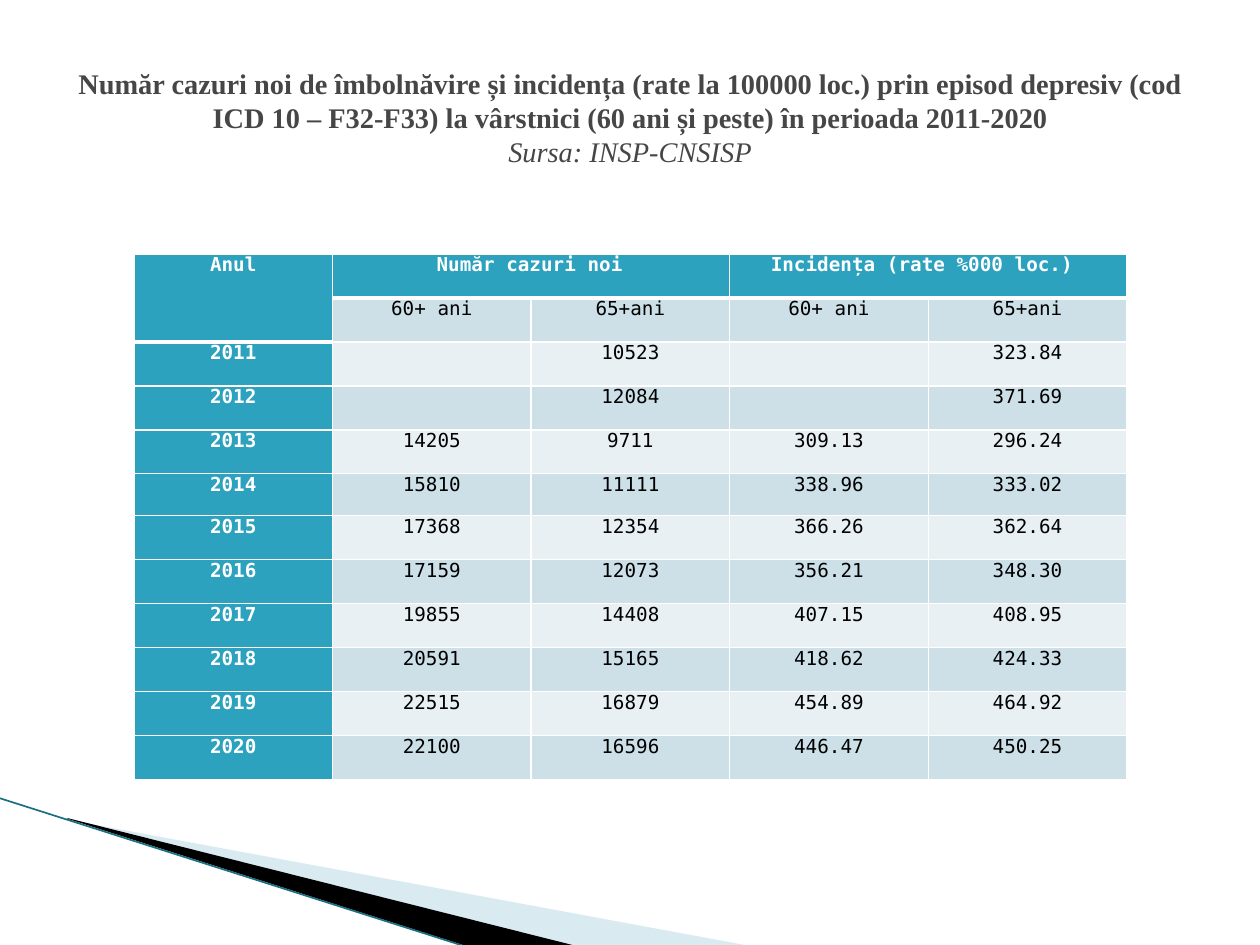
from typing import NamedTuple

from lxml import etree
from pptx import Presentation
from pptx.dml.color import RGBColor
from pptx.enum.shapes import MSO_CONNECTOR
from pptx.enum.text import MSO_ANCHOR, MSO_AUTO_SIZE, PP_ALIGN
from pptx.oxml.ns import qn
from pptx.util import Pt

STRAIGHT = MSO_CONNECTOR.STRAIGHT
CENTER = PP_ALIGN.CENTER
MIDDLE = MSO_ANCHOR.MIDDLE
NO_AUTOFIT = MSO_AUTO_SIZE.NONE

SCALE = 914400 / 126
TITLE_ONLY = 5

WHITE = RGBColor(0xFF, 0xFF, 0xFF)
BLACK = RGBColor(0x00, 0x00, 0x00)
GRAY = RGBColor(0x46, 0x46, 0x46)
TEAL = RGBColor(0x2D, 0xA2, 0xBF)
DARK_TEAL = RGBColor(0x1B, 0x6F, 0x82)
PALE_BLUE = RGBColor(0xA0, 0xCB, 0xDC)
BAND_DARK = RGBColor(0xCD, 0xE0, 0xE8)
BAND_LIGHT = RGBColor(0xE8, 0xF0, 0xF4)

SERIF = "Times New Roman"
MONO = "DejaVu Sans Mono"


class Wedge(NamedTuple):
    points: list[tuple[int, int]]
    color: RGBColor
    opacity: int


class YearRow(NamedTuple):
    year: str
    cases_60: str
    cases_65: str
    rate_60: str
    rate_65: str


WEDGES = [
    Wedge([(69, 820), (750, 946), (575, 946), (69, 819)], PALE_BLUE, 40),
    Wedge([(67, 818), (576, 946), (469, 947), (68, 819)], BLACK, 100),
]

HEADINGS = [
    ("Anul", "Număr cazuri noi\t", "", "Incidența (rate %000 loc.)\t", ""),
    ("", "60+ ani", "65+ani", "60+ ani", "65+ani"),
]
YEARS = [
    YearRow("2011", "", "10523", "", "323.84"),
    YearRow("2012", "", "12084", "", "371.69"),
    YearRow("2013", "14205", "9711", "309.13", "296.24"),
    YearRow("2014", "15810", "11111", "338.96", "333.02"),
    YearRow("2015", "17368", "12354", "366.26", "362.64"),
    YearRow("2016", "17159", "12073", "356.21", "348.30"),
    YearRow("2017", "19855", "14408", "407.15", "408.95"),
    YearRow("2018", "20591", "15165", "418.62", "424.33"),
    YearRow("2019", "22515", "16879", "454.89", "464.92"),
    YearRow("2020", "22100", "16596", "446.47", "450.25"),
]
ROW_HEIGHT = 44
SHORT_ROW, SHORT_HEIGHT = 5, 42
MERGES = [((0, 0), (1, 0)), ((0, 1), (0, 2)), ((0, 3), (0, 4))]


def px(n: int) -> int:
    return round(n * SCALE)


def add_text(p, text: str, *, font: str, size: float, color: RGBColor,
             bold: bool = False, italic: bool = False) -> None:
    p.alignment = CENTER
    r = p.add_run()
    r.text = text
    r.font.name = font
    r.font.size = Pt(size)
    r.font.color.rgb = color
    r.font.bold = bold
    r.font.italic = italic


def draw_wedge(slide, wedge: Wedge) -> None:
    start, *rest = wedge.points
    builder = slide.shapes.build_freeform(*start, scale=SCALE)
    builder.add_line_segments(rest, close=True)
    sp = builder.convert_to_shape()
    sp.shadow.inherit = False
    sp.line.fill.background()
    sp.fill.solid()
    sp.fill.fore_color.rgb = wedge.color
    if wedge.opacity < 100:
        color = sp.fill._xPr.find(".//" + qn("a:srgbClr"))
        etree.SubElement(color, qn("a:alpha"), val=str(wedge.opacity * 1000))


def draw_edge(slide) -> None:
    line = slide.shapes.add_connector(STRAIGHT, px(-1), px(798), px(467), px(947))
    line.line.color.rgb = DARK_TEAL
    line.line.width = Pt(0.95)
    etree.SubElement(line._element.spPr, qn("a:effectLst"))


def set_borders(cell, bottom: int) -> None:
    tc_pr = cell._tc.get_or_add_tcPr()
    for i, (side, width) in enumerate(zip("LRTB", (1, 1, 1, bottom))):
        ln = etree.Element(qn(f"a:ln{side}"), w=str(Pt(width)))
        fill = etree.SubElement(ln, qn("a:solidFill"))
        etree.SubElement(fill, qn("a:srgbClr"), val=str(WHITE))
        tc_pr.insert(i, ln)


def draw_cell(cell, text: str, row: int, col: int) -> None:
    header = row == 0 or col == 0
    cell.margin_left = cell.margin_right = px(9)
    cell.margin_top = cell.margin_bottom = 0
    cell.fill.solid()
    band = BAND_DARK if row % 2 else BAND_LIGHT
    cell.fill.fore_color.rgb = TEAL if header else band
    set_borders(cell, 3 if row == 0 or (row, col) == (1, 0) else 1)
    if text:
        add_text(cell.text_frame.paragraphs[0], text, font=MONO, size=11,
                 color=WHITE if header else BLACK, bold=header)


def draw_table(slide) -> None:
    rows = HEADINGS + YEARS
    heights = [ROW_HEIGHT] * len(rows)
    heights[SHORT_ROW] = SHORT_HEIGHT
    table = slide.shapes.add_table(len(rows), len(rows[0]), px(134), px(254),
                                   px(993), px(sum(heights))).table
    for start, end in MERGES:
        table.cell(*start).merge(table.cell(*end))
    for i, (values, height) in enumerate(zip(rows, heights)):
        table.rows[i].height = px(height)
        for j, text in enumerate(values):
            draw_cell(table.cell(i, j), text, i, j)


def draw_title(slide) -> None:
    title = slide.shapes.title
    title.left, title.top = px(63), px(38)
    title.width, title.height = px(1134), px(158)
    tf = title.text_frame
    tf.word_wrap = True
    tf.auto_size = NO_AUTOFIT
    tf.vertical_anchor = MIDDLE
    p = tf.paragraphs[0]
    style = {"font": SERIF, "size": 16.2, "color": GRAY}
    add_text(p, "Număr cazuri noi de îmbolnăvire și incidența (rate la 100000 loc.) "
                "prin episod depresiv (cod ICD 10 – F32-F33) la vârstnici "
                "(60 ani și peste) în perioada 2011-2020", bold=True, **style)
    p.add_line_break()
    add_text(p, "Sursa: INSP-CNSISP", italic=True, **style)


def main() -> None:
    prs = Presentation()
    prs.slide_width, prs.slide_height = px(1260), px(945)
    slide = prs.slides.add_slide(prs.slide_layouts[TITLE_ONLY])
    for wedge in WEDGES:
        draw_wedge(slide, wedge)
    draw_edge(slide)
    draw_table(slide)
    draw_title(slide)
    prs.save("out.pptx")


if __name__ == "__main__":
    main()
